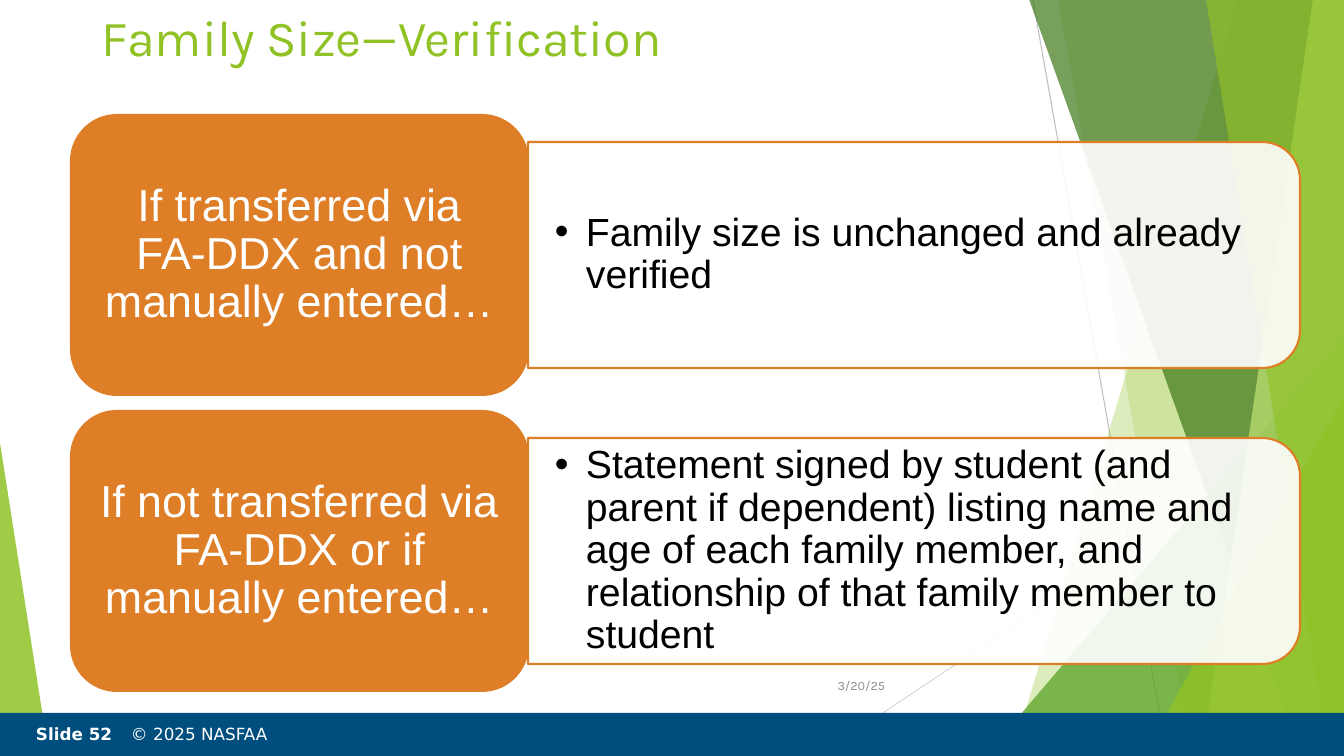
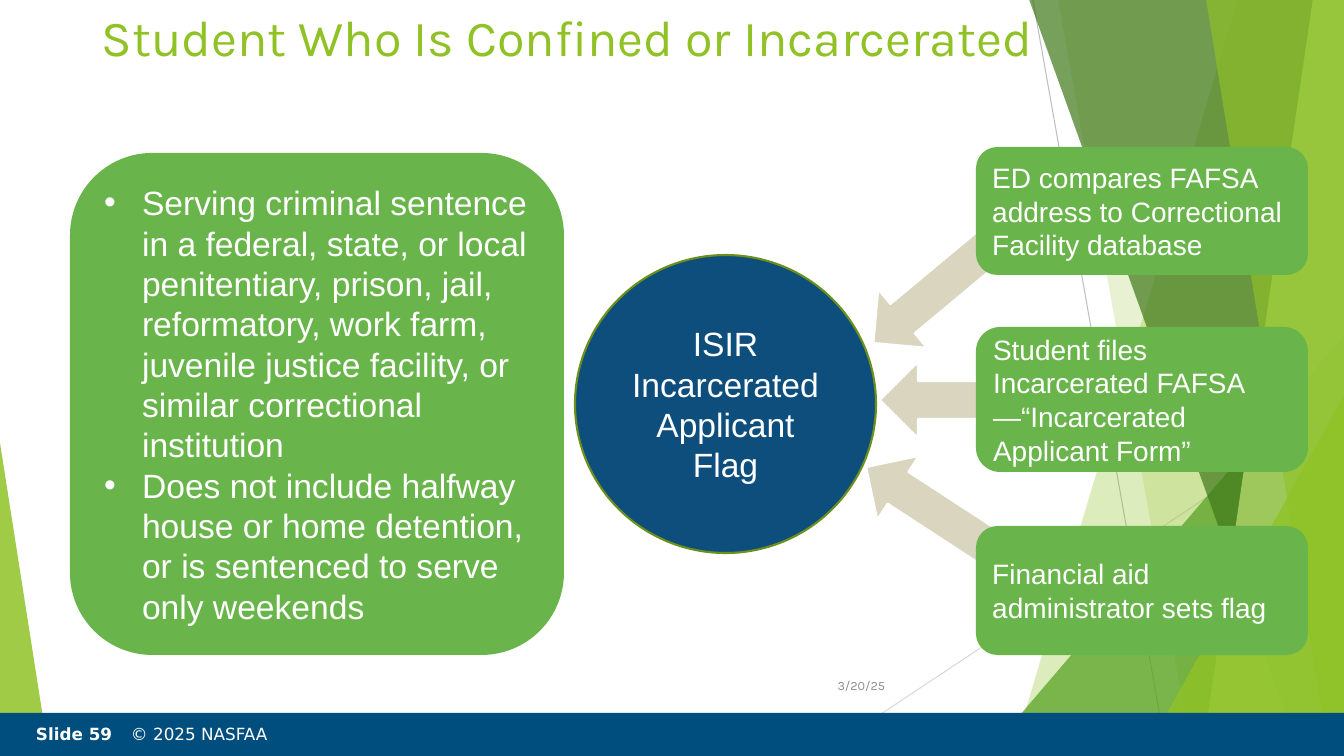
from lxml import etree
from pptx import Presentation
from pptx.dml.color import RGBColor
from pptx.enum.shapes import MSO_CONNECTOR, MSO_SHAPE
from pptx.enum.text import MSO_ANCHOR, MSO_AUTO_SIZE, PP_ALIGN
from pptx.oxml.ns import qn
from pptx.util import Pt

PX = 914400 / 100.8  # EMU in one px
WIDTH, HEIGHT = 1344, 756
LIME, NAVY, ORANGE, GREEN = "90C226", "004E7D", "DE7E26", "6AB54B"
WHITE, BLACK = "FFFFFF", "000000"
color = RGBColor.from_string


def draw(slide, kind, box, fill=None, alpha=100, line=None):
    """Draw a preset shape, a "text" box, or a "freeform" whose box lists its points."""
    if kind == "freeform":
        builder = slide.shapes.build_freeform(*box[0], scale=PX)
        builder.add_line_segments(box[1:], close=True)
        sp = builder.convert_to_shape()
    else:
        emu = [round(v * PX) for v in box]
        if kind == "text":
            return slide.shapes.add_textbox(*emu)
        sp = slide.shapes.add_shape(kind, *emu)
    sp.shadow.inherit = False
    sp.fill.solid()
    sp.fill.fore_color.rgb = color(fill)
    if alpha < 100:
        clr = sp._element.spPr.find(qn("a:solidFill"))[0]
        etree.SubElement(clr, qn("a:alpha"), val=str(alpha * 1000))
    if line:
        sp.line.color.rgb = color(line)
        sp.line.width = Pt(1.5)
    else:
        sp.line.fill.background()
    return sp


def write(sp, text, size, hex_color, font="Arial", align=PP_ALIGN.LEFT,
          spacing=None, indent=0, insets=(10, 5), anchor=MSO_ANCHOR.MIDDLE):
    """Fill a shape with text, one paragraph a line; an indent in px gives bullets."""
    tf = sp.text_frame
    tf.text = text
    tf.word_wrap = True
    tf.auto_size = MSO_AUTO_SIZE.NONE
    tf.vertical_anchor = anchor
    tf.margin_left = tf.margin_right = round(insets[0] * PX)
    tf.margin_top = tf.margin_bottom = round(insets[1] * PX)
    for p in tf.paragraphs:
        p.alignment = align
        if spacing:
            p.line_spacing = spacing
        if indent:
            pPr = p._p.get_or_add_pPr()
            pPr.set("marL", str(round(indent * PX)))
            pPr.set("indent", str(round(-indent * PX)))
            etree.SubElement(pPr, qn("a:buFont"), typeface="Arial")
            etree.SubElement(pPr, qn("a:buChar"), char="•")
        for r in p.runs:
            r.font.size = Pt(size)
            r.font.name = font
            r.font.color.rgb = color(hex_color)
    return tf


prs = Presentation()
prs.slide_width, prs.slide_height = round(WIDTH * PX), round(HEIGHT * PX)

# Shared backdrop: thin lines, then translucent facets
rays = [((1033, 0, 1167, 756), "BFBFBF"), ((1344, 406, 818, 756), "D9D9D9")]
# A facet reaches the right edge from its top x and bottom x
facets = [(1238, 1012, LIME, 30), (1058, 1192, LIME, 20), (1029, 1301, "3F7819", 70),
          (1313, 1202, "C0E474", 70), (1206, 1329, LIME, 65)]
# Triangles: box, apex side, fill, opacity
triangles = [((985, 336, 359, 420), 1, "54A021", 72),
             ((1143, 396, 201, 360), 1, LIME, 80),
             ((0, 443, 49, 313), 0, LIME, 85)]
backdrop = facets[:2] + triangles[:1] + facets[2:] + triangles[1:]

slides = []
for title, number in [("Family Size—Verification", 52),
                      ("Student Who Is Confined or Incarcerated", 59)]:
    slide = prs.slides.add_slide(prs.slide_layouts[5])
    slides.append(slide)

    for ends, hex_color in rays:
        ray = slide.shapes.add_connector(MSO_CONNECTOR.STRAIGHT,
                                         *[round(v * PX) for v in ends])
        ray.line.color.rgb = color(hex_color)
        ray.line.width = Pt(0.75)
        etree.SubElement(ray._element.spPr, qn("a:effectLst"))
    for first, second, fill, alpha in backdrop:
        if isinstance(first, tuple):
            sp = draw(slide, MSO_SHAPE.ISOSCELES_TRIANGLE, first, fill, alpha)
            sp.adjustments[0] = second
        else:
            points = [(first, -1), (WIDTH, -1), (WIDTH, HEIGHT), (second, HEIGHT)]
            draw(slide, "freeform", points, fill, alpha)

    # Title
    sp = slide.shapes.title
    sp.left, sp.top, sp.width, sp.height = [round(v * PX) for v in (92, 1, 1159, 147)]
    write(sp, title, 36, LIME, "Karla", anchor=MSO_ANCHOR.TOP)

    # Footer band, slide number and date
    draw(slide, MSO_SHAPE.RECTANGLE, (0, 713, WIDTH, 43), NAVY)
    sp = draw(slide, "text", (26, 707, 381, 54))
    tf = write(sp, f"Slide {number}\t", 12, WHITE, "DejaVu Sans")
    p = tf.paragraphs[0]
    tabs = etree.SubElement(p._p.get_or_add_pPr(), qn("a:tabLst"))
    etree.SubElement(tabs, qn("a:tab"), pos=str(round(95 * PX)), algn="l")
    p.runs[0].font.bold = True
    r = p.add_run()
    r.text = "© 2025 NASFAA"
    r.font.size = Pt(12)
    r.font.name = "DejaVu Sans"
    r.font.color.rgb = color(WHITE)
    sp = draw(slide, "text", (794, 666, 101, 40))
    write(sp, "3/20/25", 9, "8C8C8C", "Karla", PP_ALIGN.RIGHT)

verification, incarcerated = slides

# Family size: one row per case, with its requirement
cases = [
    ("If transferred via FA-DDX and not manually entered…",
     "Family size is unchanged and already verified"),
    ("If not transferred via FA-DDX or if manually entered…",
     "Statement signed by student (and parent if dependent) listing name and age of "
     "each family member, and relationship of that family member to student"),
]
for row, (case, requirement) in enumerate(cases):
    top = 114 + 296 * row
    # The panel is drawn upright and turned to lie beside the case
    panel = draw(verification, MSO_SHAPE.ROUND_2_SAME_RECTANGLE,
                 (801, top - 245, 226, 772), WHITE, 90, ORANGE)
    panel.rotation = 90
    sp = draw(verification, "text", (528, top + 39, 761, 204))
    write(sp, requirement, 28, BLACK, spacing=0.9, indent=31, insets=(27, 14))
    sp = draw(verification, MSO_SHAPE.ROUNDED_RECTANGLE, (70, top, 459, 282), ORANGE)
    write(sp, case, 32, WHITE, align=PP_ALIGN.CENTER, spacing=0.9, insets=(13, 7))

# Incarcerated: arrows from the sources to the flag
for left, top, angle in [(917, 325, 90), (891, 433, 123.1), (893, 220, 50.2)]:
    arrow = draw(incarcerated, MSO_SHAPE.DOWN_ARROW, (left, top, 76, 150),
                 "C1B995", 60, WHITE)
    arrow.rotation = angle

# Definition
sp = draw(incarcerated, MSO_SHAPE.ROUNDED_RECTANGLE, (70, 153, 494, 502), GREEN)
write(sp, "Serving criminal sentence in a federal, state, or local penitentiary, prison, "
      "jail, reformatory, work farm, juvenile justice facility, or similar correctional "
      "institution\nDoes not include halfway house or home detention, or is sentenced "
      "to serve only weekends", 24, WHITE, indent=38)

# Sources of the flag
sources = [
    (147, 128, "ED compares FAFSA address to Correctional Facility database"),
    (327, 145, "Student files Incarcerated FAFSA—“Incarcerated Applicant Form”"),
    (526, 129, "Financial aid administrator sets flag"),
]
for top, height, text in sources:
    sp = draw(incarcerated, MSO_SHAPE.ROUNDED_RECTANGLE, (976, top, 332, height), GREEN)
    write(sp, text, 20, WHITE)

# Flag
sp = draw(incarcerated, MSO_SHAPE.OVAL, (575, 255, 301, 298), "0E4E7D", line="6B901C")
write(sp, "ISIR\nIncarcerated Applicant Flag", 24, WHITE, align=PP_ALIGN.CENTER)

prs.save("out.pptx")
